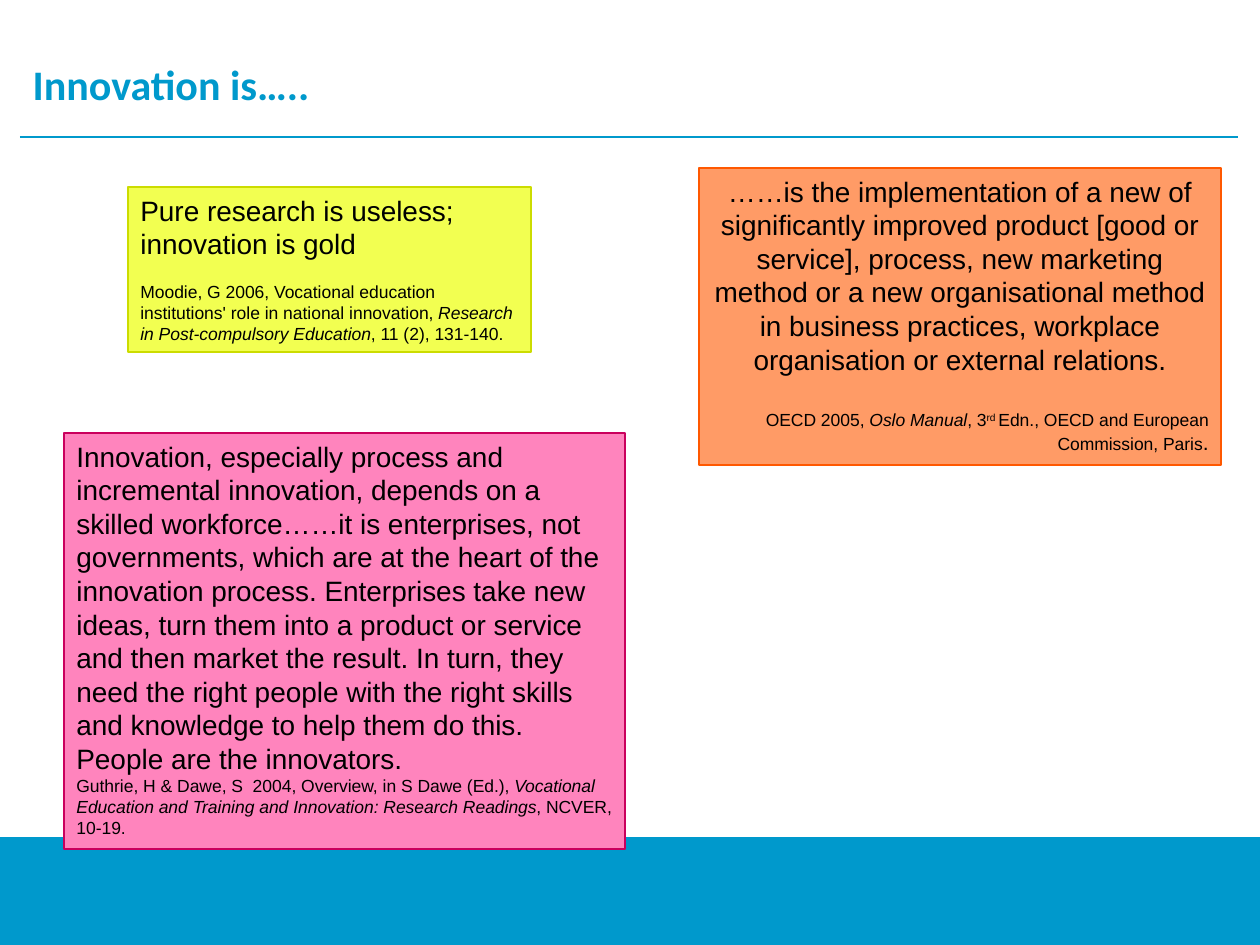
import pptx
import pptx.util
import pptx.dml.color
import pptx.enum.shapes
import pptx.enum.text
import pptx.oxml

RGB = pptx.dml.color.RGBColor
ALIGN = pptx.enum.text.PP_ALIGN
ANCHOR = pptx.enum.text.MSO_ANCHOR
SHAPE = pptx.enum.shapes.MSO_SHAPE

BLUE, BLACK = RGB(0x00, 0x99, 0xCC), RGB(0, 0, 0)
ORANGE, ORANGE_EDGE = RGB(0xFF, 0x9B, 0x66), RGB(0xFF, 0x58, 0x00)
YELLOW, YELLOW_EDGE = RGB(0xF2, 0xFF, 0x51), RGB(0xCC, 0xDC, 0x00)
PINK, PINK_EDGE = RGB(0xFF, 0x84, 0xBD), RGB(0xCA, 0x00, 0x5D)

# Content
TITLE = "Innovation is….."
QUOTE = {"name": "Arial", "size": pptx.util.Pt(16), "color": BLACK}
SOURCE = {**QUOTE, "size": pptx.util.Pt(10)}
WORK = {**SOURCE, "italic": True}
ORDINAL = {**SOURCE, "raised": True}
STOP = {**SOURCE, "size": pptx.util.Pt(12)}

# Each card: place in px, colours, alignments of quote and source,
# gap before the source in points, quote, source spans
CARDS = [
    {"place": (699, 168, 522, 297), "fill": ORANGE, "edge": ORANGE_EDGE,
     "align": (ALIGN.CENTER, ALIGN.RIGHT), "gap": 19,
     "quote": "……is the implementation of a new of significantly improved "
              "product [good or service], process, new marketing method or a "
              "new organisational method in business practices, workplace "
              "organisation or external relations.",
     "source": [("OECD 2005, ", SOURCE), ("Oslo Manual", WORK), (", 3", SOURCE),
                ("rd ", ORDINAL),
                ("Edn., OECD and European Commission, Paris", SOURCE),
                (".", STOP)]},
    {"place": (128, 187, 403, 165), "fill": YELLOW, "edge": YELLOW_EDGE,
     "align": (ALIGN.LEFT, ALIGN.LEFT), "gap": 12,
     "quote": "Pure research is useless; innovation is gold",
     "source": [("Moodie, G 2006, Vocational education institutions' role in "
                 "national innovation, ", SOURCE),
                ("Research in Post-compulsory Education", WORK),
                (", 11 (2), 131-140.", SOURCE)]},
    {"place": (64, 433, 561, 416), "fill": PINK, "edge": PINK_EDGE,
     "align": (ALIGN.LEFT, ALIGN.LEFT), "gap": 0,
     "quote": "Innovation, especially process and incremental innovation, "
              "depends on a skilled workforce……it is enterprises, not "
              "governments, which are at the heart of the innovation process. "
              "Enterprises take new ideas, turn them into a product or service "
              "and then market the result. In turn, they need the right people "
              "with the right skills and knowledge to help them do this. "
              "People are the innovators.",
     "source": [("Guthrie, H & Dawe, S  2004, Overview, in S Dawe (Ed.), ", SOURCE),
                ("Vocational Education and Training and Innovation: "
                 "Research Readings", WORK),
                (", NCVER, 10-19.", SOURCE)]},
]


def px(*lengths):
    return [pptx.util.Emu(round(length * 914400 / 126)) for length in lengths]


def add_span(para, text, style):
    span = para.add_run()
    span.text = text
    for key, value in style.items():
        if key == "color":
            span.font.color.rgb = value
        elif key == "raised":
            span.font._element.set("baseline", "30000")
        else:
            setattr(span.font, key, value)


def add_rectangle(page, place, fill):
    box = page.shapes.add_shape(SHAPE.RECTANGLE, *px(*place))
    box.shadow.inherit = False
    box.fill.solid()
    box.fill.fore_color.rgb = fill
    return box


def add_card(page, card):
    box = add_rectangle(page, card["place"], card["fill"])
    box.line.color.rgb = card["edge"]
    box.line.width = pptx.util.Pt(0.75)
    frame = box.text_frame
    frame.word_wrap = True
    frame.vertical_anchor = ANCHOR.TOP
    quote, source = frame.paragraphs[0], frame.add_paragraph()
    quote.alignment, source.alignment = card["align"]
    source.space_before = pptx.util.Pt(card["gap"])
    add_span(quote, card["quote"], QUOTE)
    for text, style in card["source"]:
        add_span(source, text, style)


deck = pptx.Presentation()
deck.slide_width, deck.slide_height = px(1260, 945)
page = deck.slides.add_slide(deck.slide_layouts[5])

# Footer band
band = add_rectangle(page, (0, 837, 1260, 108), BLUE)
band.line.fill.background()

# Rule under the title
rule = page.shapes.add_connector(
    pptx.enum.shapes.MSO_CONNECTOR.STRAIGHT, *px(20, 137, 1238, 137))
rule.line.color.rgb = BLUE
rule.line.width = pptx.util.Pt(1.5)
rule._element.spPr.append(pptx.oxml.parse_xml(
    '<a:effectLst xmlns:a="http://schemas.openxmlformats.org/drawingml/2006/main"/>'))

# Title
title = page.shapes.title
title.left, title.top, title.width, title.height = px(20, 47, 1218, 73)
title.text_frame.vertical_anchor = ANCHOR.MIDDLE
heading = title.text_frame.paragraphs[0]
heading.alignment = ALIGN.LEFT
add_span(heading, TITLE, {"name": "Calibri", "size": pptx.util.Pt(24),
                          "bold": True, "color": BLUE})

# Quotation cards
for card in CARDS:
    add_card(page, card)

deck.save("out.pptx")
